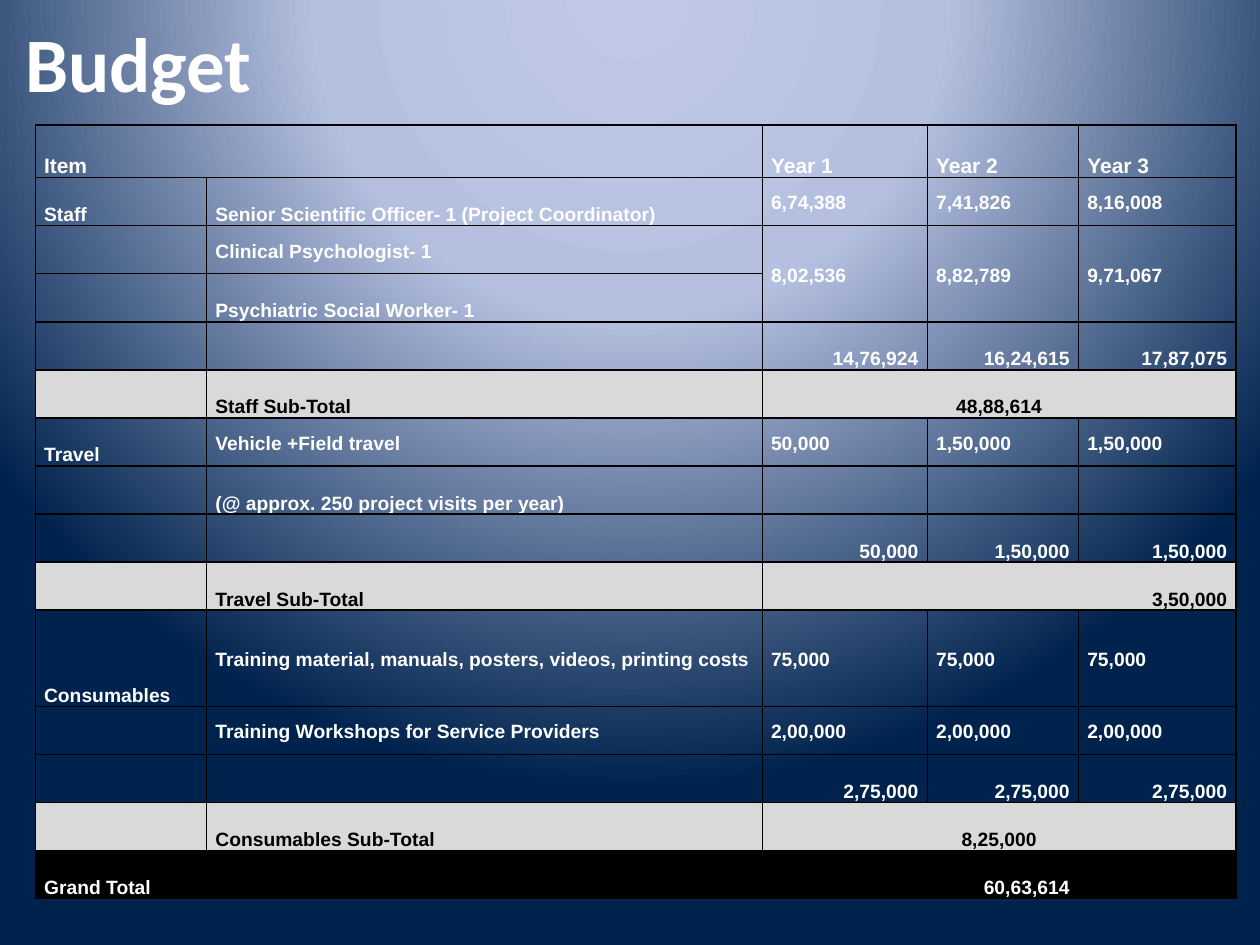
from dataclasses import dataclass

from lxml import etree
from pptx import Presentation
from pptx import util as u
from pptx.dml.color import RGBColor
from pptx.enum import text
from pptx.oxml import ns, parse_xml


@dataclass(frozen=True)
class Theme:
    white: str = "FFFFFF"
    black: str = "000000"
    grey: str = "D9D9D9"
    backdrop: tuple = ((0, "BFC9E5"), (40, "B5C0E0"), (100, "00234D"))
    title_font: str = "Calibri"
    body_font: str = "Arial"
    title_size: int = 44
    header_size: int = 12
    body_size: int = 11
    border: int = 1


# How a cell's text sits: (vertical anchor, alignment)
LOW = (text.MSO_ANCHOR.BOTTOM, text.PP_ALIGN.LEFT)
LOW_CENTRE = (text.MSO_ANCHOR.BOTTOM, text.PP_ALIGN.CENTER)
LOW_RIGHT = (text.MSO_ANCHOR.BOTTOM, text.PP_ALIGN.RIGHT)
MID = (text.MSO_ANCHOR.MIDDLE, text.PP_ALIGN.JUSTIFY)

# Row kind: placing of item, detail and yearly values
PLACING = {
    "header": (LOW, LOW, LOW),
    "lead": (LOW, LOW, MID),
    "entry": (LOW, MID, MID),
    "note": (LOW, LOW, LOW),
    "total": (LOW, LOW, LOW_RIGHT),
    "subtotal": (LOW, LOW, LOW_CENTRE),
    "subtotal right": (LOW, LOW, LOW_RIGHT),
    "grand": (LOW, LOW, LOW_RIGHT),
}

# Row kind, item, detail, values for years 1 to 3
BUDGET = [
    ("header", "Item", "", "Year 1", "Year 2", "Year 3"),
    ("lead", "Staff", "Senior Scientific Officer- 1 (Project Coordinator)",
     "6,74,388", "7,41,826", "8,16,008"),
    ("entry", "", "Clinical Psychologist- 1", "8,02,536", "8,82,789", "9,71,067"),
    ("note", "", "Psychiatric Social Worker- 1", "", "", ""),
    ("total", "", "", "14,76,924", "16,24,615", "17,87,075"),
    ("subtotal", "", "Staff Sub-Total", "48,88,614", "", ""),
    ("entry", "Travel", "Vehicle +Field travel", "50,000", "1,50,000", "1,50,000"),
    ("note", "", "(@ approx. 250 project visits per year)", "", "", ""),
    ("total", "", "", "50,000", "1,50,000", "1,50,000"),
    ("subtotal right", "", "Travel Sub-Total", "3,50,000", "", ""),
    ("entry", "Consumables", "Training material, manuals, posters, videos, printing costs",
     "75,000", "75,000", "75,000"),
    ("entry", "", "Training Workshops for Service Providers",
     "2,00,000", "2,00,000", "2,00,000"),
    ("total", "", "", "2,75,000", "2,75,000", "2,75,000"),
    ("subtotal", "", "Consumables Sub-Total", "8,25,000", "", ""),
    ("grand", "Grand Total", "", "", "60,63,614", ""),
]
COLUMNS = (1.36, 4.41, 1.31, 1.2, 1.25)
HEADER_UNITS, MATERIALS_UNITS, MATERIALS_ROW = 1.1, 2, 10


class Deck:
    def __init__(self, theme):
        self.theme = theme
        self.prs = Presentation()
        self.prs.slide_width, self.prs.slide_height = u.Inches(10), u.Inches(7.5)
        self.slide = self.prs.slides.add_slide(self.prs.slide_layouts[5])

    def box(self, *shares):
        """Left, top, width and height from shares of the slide."""
        sides = (self.prs.slide_width, self.prs.slide_height) * 2
        return [round(share * side) for share, side in zip(shares, sides)]

    def add_words(self, paragraph, words, colour, **formats):
        run = paragraph.add_run()
        run.text = words
        for name, value in formats.items():
            setattr(run.font, name, value)
        run.font.color.rgb = RGBColor.from_string(colour)

    def background(self):
        """Circular gradient centred above the slide."""
        fill = self.slide.background.fill
        fill.solid()
        stops = "".join(
            f'<a:gs pos="{at * 1000}"><a:srgbClr val="{colour}"/></a:gs>'
            for at, colour in self.theme.backdrop)
        gradient = parse_xml(
            f'<a:gradFill {ns.nsdecls("a")} rotWithShape="1"><a:gsLst>{stops}</a:gsLst>'
            '<a:path path="circle"><a:fillToRect l="50000" t="-80000" r="50000" b="180000"/>'
            '</a:path></a:gradFill>')
        solid = self.slide.element.find(".//" + ns.qn("p:bgPr")).find(ns.qn("a:solidFill"))
        solid.getparent().replace(solid, gradient)

    def title(self, words, *shares):
        heading = self.slide.shapes.title
        heading.left, heading.top, heading.width, heading.height = self.box(*shares)
        heading.text_frame.vertical_anchor = text.MSO_ANCHOR.MIDDLE
        paragraph = heading.text_frame.paragraphs[0]
        paragraph.alignment = text.PP_ALIGN.LEFT
        self.add_words(paragraph, words, self.theme.white, bold=True,
                       name=self.theme.title_font, size=u.Pt(self.theme.title_size))

    def borders(self, cell):
        props = cell._tc.get_or_add_tcPr()
        for place, side in enumerate(("lnL", "lnR", "lnT", "lnB")):
            line = etree.Element(ns.qn(f"a:{side}"), w=str(u.Pt(self.theme.border)))
            solid = etree.SubElement(line, ns.qn("a:solidFill"))
            etree.SubElement(solid, ns.qn("a:srgbClr"), val=self.theme.black)
            props.insert(place, line)

    def cell(self, cell, words, kind, placing):
        theme = self.theme
        subtotal = kind.startswith("subtotal")
        anchor, alignment = placing
        formats = {"margin_left": u.Inches(0.07), "margin_right": u.Inches(0.07),
                   "margin_top": 0, "margin_bottom": 0, "vertical_anchor": anchor}
        for name, value in formats.items():
            setattr(cell, name, value)
        if subtotal or kind == "grand":
            cell.fill.solid()
            cell.fill.fore_color.rgb = RGBColor.from_string(
                theme.grey if subtotal else theme.black)
        else:
            cell.fill.background()
        self.borders(cell)
        if words:
            paragraph = cell.text_frame.paragraphs[0]
            paragraph.alignment, paragraph.line_spacing = alignment, 1.15
            size = theme.header_size if kind == "header" else theme.body_size
            self.add_words(paragraph, words, theme.black if subtotal else theme.white,
                           bold=True, name=theme.body_font, size=u.Pt(size))

    def table(self, rows, *shares):
        frame = self.slide.shapes.add_table(len(rows), len(COLUMNS), *self.box(*shares))
        grid = frame.table
        grid.first_row = grid.horz_banding = False
        # Columns and rows share out the frame
        width, height = frame.width, frame.height
        for column, part in zip(grid.columns, COLUMNS):
            column.width = round(width * part / sum(COLUMNS))
        units = [1] * len(rows)
        units[0], units[MATERIALS_ROW] = HEADER_UNITS, MATERIALS_UNITS
        for row, unit in zip(grid.rows, units):
            row.height = round(height * unit / sum(units))
        # Cell contents
        for r, (kind, *words) in enumerate(rows):
            for c, entry in enumerate(words):
                self.cell(grid.cell(r, c), entry, kind, PLACING[kind][min(c, 2)])
            if kind.startswith("subtotal"):
                grid.cell(r, 2).merge(grid.cell(r, 4))
        # Item heading, and yearly pay shared by two posts
        grid.cell(0, 0).merge(grid.cell(0, 1))
        for c in (2, 3, 4):
            grid.cell(2, c).merge(grid.cell(3, c))


def main():
    deck = Deck(Theme())
    deck.background()
    deck.title("Budget", 0.01, 0, 0.94, 0.13)
    deck.table(BUDGET, 0.028, 0.132, 0.953, 0.819)
    deck.prs.save("out.pptx")


if __name__ == "__main__":
    main()
